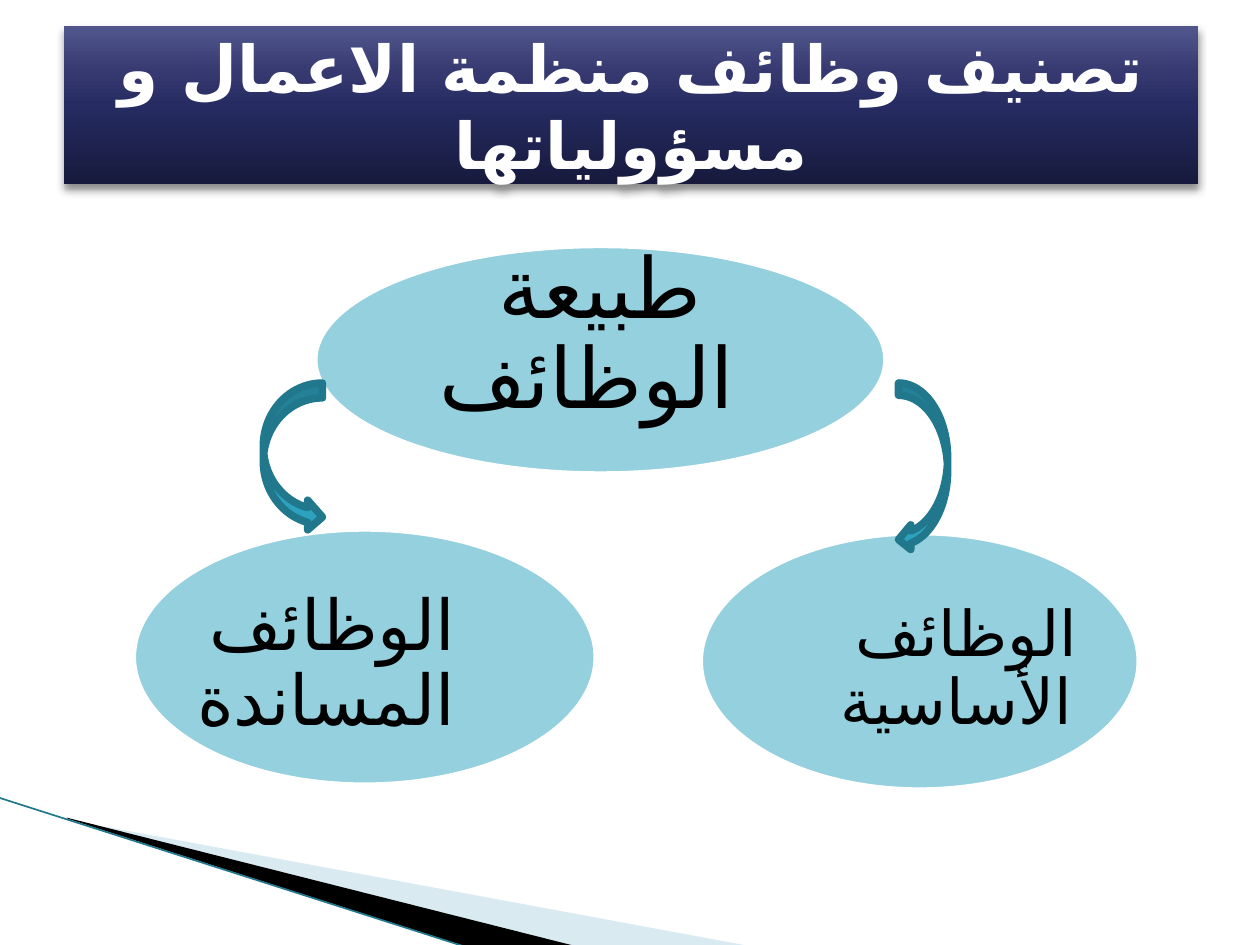
"""Build a slide classifying the functions of a business organisation."""
from copy import deepcopy

from lxml.etree import SubElement
from pptx import Presentation
from pptx.dml.color import RGBColor
from pptx.enum.shapes import MSO_CONNECTOR, MSO_SHAPE
from pptx.enum.text import MSO_ANCHOR, PP_ALIGN
from pptx.oxml.ns import qn
from pptx.util import Pt

FONT = "Noto Sans Mono"
ARABIC_FONT = "DejaVu Sans"
WHITE = RGBColor(0xFF, 0xFF, 0xFF)
BLACK = RGBColor(0, 0, 0)
TEAL = RGBColor(0x2D, 0xA2, 0xBF)
DARK_TEAL = RGBColor(0x21, 0x78, 0x8D)
PALE_BLUE = RGBColor(0xA0, 0xCB, 0xDC)
BANNER_STOPS = [
    (0, RGBColor(0x17, 0x1A, 0x3D)),
    (0.5, RGBColor(0x26, 0x2B, 0x61)),
    (0.7, RGBColor(0x35, 0x39, 0x70)),
    (1, RGBColor(0x51, 0x56, 0x8D)),
]
OUTLINE = 4.33

TITLE = "تصنيف وظائف منظمة الاعمال و مسؤولياتها"
TITLE_BOX = (36.7, 15, 648, 90)
SWOOSHES = [
    ([(39.6, 468.6), (428.4, 540.6), (328.3, 540.6), (39.6, 468)], PALE_BLUE, 40),
    ([(38.2, 467.3), (329, 540.7), (267.8, 541.4), (38.9, 468)], BLACK, 100),
]
EDGE = (-0.7, 455.8, 267.1, 541.4)
NODES = [
    ("طبيعة الوظائف ", 48, PP_ALIGN.CENTER,
     (179.3, 139.7, 327.6, 131.8), (223.2, 162.7, 239.8, 59)),
    ("الوظائف الأساسية ", 36, PP_ALIGN.CENTER,
     (399.6, 303.8, 252, 148.3), (476.6, 342, 151.2, 81.4)),
    ("الوظائف المساندة", 40, PP_ALIGN.RIGHT,
     (75.6, 301.7, 265.7, 147.6), (100.8, 339.8, 159.1, 80.6)),
]
ARROWS = [
    (MSO_SHAPE.CURVED_RIGHT_ARROW, (150.5, 218.9, 33.8, 85)),
    (MSO_SHAPE.CURVED_LEFT_ARROW, (513.4, 218.9, 28.1, 96.5)),
]


def pts(values):
    return [Pt(v) for v in values]


def set_fill(sp, color, opacity=100):
    sp.fill.solid()
    sp.fill.fore_color.rgb = color
    if opacity < 100:
        clr = sp._element.spPr.find(qn("a:solidFill")).find(qn("a:srgbClr"))
        SubElement(clr, qn("a:alpha"), val=str(opacity * 1000))


def add_shape(s, kind, box, color, opacity, line):
    sp = s.shapes.add_shape(kind, *pts(box))
    sp.shadow.inherit = False
    set_fill(sp, color, opacity)
    sp.line.color.rgb = line
    sp.line.width = Pt(OUTLINE)


def write(sp, text, size, color, align, bold=False):
    tf = sp.text_frame
    tf.word_wrap = True
    tf.vertical_anchor = MSO_ANCHOR.MIDDLE
    p = tf.paragraphs[0]
    p.text = text
    p.alignment = align
    r = p.runs[0]
    r.font.size = Pt(size)
    r.font.bold = bold
    r.font.name = FONT
    r.font.color.rgb = color
    SubElement(r.font._element, qn("a:cs"), typeface=ARABIC_FONT)
    return tf


def add_backdrop(s):
    for points, color, opacity in SWOOSHES:
        start, *rest = [pts(point) for point in points]
        builder = s.shapes.build_freeform(*start)
        builder.add_line_segments(rest)
        sp = builder.convert_to_shape()
        sp.shadow.inherit = False
        set_fill(sp, color, opacity)
        sp.line.fill.background()
    edge = s.shapes.add_connector(MSO_CONNECTOR.STRAIGHT, *pts(EDGE))
    edge.line.color.rgb = DARK_TEAL
    edge.line.width = Pt(0.95)
    SubElement(edge._element.spPr, qn("a:effectLst"))


def add_banner(s):
    sp = s.shapes.add_shape(MSO_SHAPE.RECTANGLE, *pts(TITLE_BOX))
    sp.line.fill.background()
    sp.fill.gradient()
    sp.fill.gradient_angle = 90
    stops = sp._element.spPr.find(qn("a:gradFill")).find(qn("a:gsLst"))
    stops.extend([deepcopy(stop) for stop in stops])
    for stop, (position, color) in zip(sp.fill.gradient_stops, BANNER_STOPS):
        stop.position = position
        stop.color.rgb = color
    sp.shadow.inherit = False
    effects = sp._element.spPr.find(qn("a:effectLst"))
    shadow = SubElement(effects, qn("a:outerShdw"), blurRad=str(Pt(5)),
                        dist=str(Pt(3)), dir="5400000", rotWithShape="0")
    clr = SubElement(shadow, qn("a:srgbClr"), val=str(BLACK))
    SubElement(clr, qn("a:alpha"), val="45000")
    write(sp, TITLE, 36.9, WHITE, PP_ALIGN.CENTER, bold=True)


def add_node(s, text, size, align, oval, label):
    add_shape(s, MSO_SHAPE.OVAL, oval, TEAL, 50, WHITE)
    tf = write(s.shapes.add_textbox(*pts(label)), text, size, BLACK, align)
    tf.margin_left = tf.margin_right = tf.margin_top = tf.margin_bottom = 0
    tf.paragraphs[0].line_spacing = 0.9


def main():
    prs = Presentation()
    prs.slide_width, prs.slide_height = Pt(720), Pt(540)
    s = prs.slides.add_slide(prs.slide_layouts[6])
    add_backdrop(s)
    for node in NODES:
        add_node(s, *node)
    add_banner(s)
    for kind, box in ARROWS:
        add_shape(s, kind, box, TEAL, 100, DARK_TEAL)
    prs.save("out.pptx")


if __name__ == "__main__":
    main()
